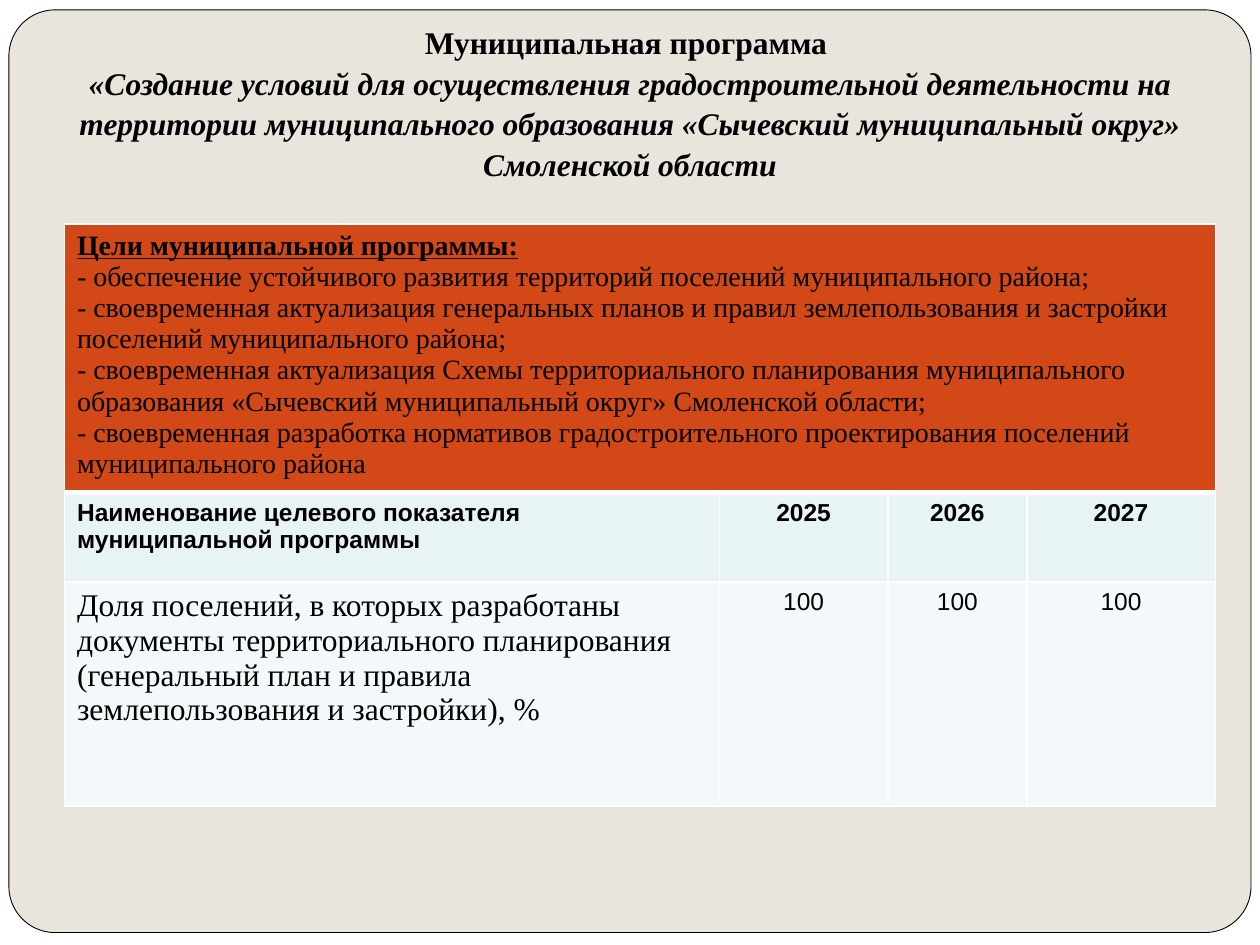
from lxml.etree import SubElement
from pptx import Presentation
from pptx.dml.color import RGBColor
from pptx.enum.shapes import MSO_SHAPE
from pptx.enum.text import MSO_ANCHOR, MSO_AUTO_SIZE, PP_ALIGN
from pptx.oxml.ns import qn
from pptx.util import Cm, Pt

BLACK = RGBColor(0x00, 0x00, 0x00)
WHITE = RGBColor(0xFF, 0xFF, 0xFF)
SAND = RGBColor(0xE9, 0xE5, 0xDC)
RUST = RGBColor(0xD3, 0x48, 0x17)
MINT = RGBColor(0xE7, 0xF3, 0xF4)
PALE = RGBColor(0xF3, 0xF9, 0xFA)
SERIF, SANS = "Times New Roman", "Arial"

HEAD = ("Муниципальная программа \v«Создание условий для осуществления "
        "градостроительной деятельности на территории муниципального образования "
        "«Сычевский муниципальный округ» Смоленской области")
GOALS = [
    "Цели муниципальной программы:",
    "- обеспечение устойчивого развития территорий поселений муниципального района;",
    "- своевременная актуализация генеральных планов и правил землепользования "
    "и застройки поселений муниципального района;",
    "- своевременная актуализация Схемы территориального планирования муниципального "
    "образования «Сычевский муниципальный округ» Смоленской области;",
    "- своевременная разработка нормативов градостроительного проектирования "
    "поселений муниципального района",
]
NAMES = ["Наименование целевого показателя муниципальной программы",
         "2025", "2026", "2027"]
SHARES = ["Доля поселений, в которых разработаны документы территориального "
          "планирования (генеральный план и правила землепользования и застройки), %",
          "100", "100", "100"]
COLS = [13.2, 3.4, 2.8, 3.8]
ROWS = [5.41, 1.8, 4.52]


class Page:
    """Hold the style and the current slide, and draw its elements."""

    def __init__(self, deck):
        self.slide = deck.slides.add_slide(deck.slide_layouts[5])
        self.ink = BLACK

    def style(self, para, size, face, bold=False, align=PP_ALIGN.LEFT):
        para.alignment = align
        for run in para.runs:
            font = run.font
            font.size, font.name, font.bold = Pt(size), face, bold
            font.color.rgb = self.ink

    def frame(self, left, top, width, height):
        box = self.slide.shapes.add_shape(
            MSO_SHAPE.ROUNDED_RECTANGLE, Cm(left), Cm(top), Cm(width), Cm(height))
        box.adjustments[0] = 0.05
        box.shadow.inherit = False
        box.fill.solid()
        box.fill.fore_color.rgb = SAND
        box.line.color.rgb = self.ink
        box.line.width = Pt(0.5)
        self.slide.shapes._spTree.insert(2, box._element)

    def title(self, text, left, top, width, height):
        box = self.slide.shapes.title
        box.left, box.top, box.width, box.height = map(Cm, (left, top, width, height))
        body = box.text_frame
        body.text = text
        body.auto_size = MSO_AUTO_SIZE.NONE
        body.vertical_anchor = MSO_ANCHOR.BOTTOM
        body.margin_bottom = Cm(0.25)
        para = body.paragraphs[0]
        para.line_spacing = 1.08
        self.style(para, 18, SERIF, True, PP_ALIGN.CENTER)
        para.runs[1].font.italic = True
        for gap in para._p.iter(qn("a:br")):
            SubElement(gap, qn("a:rPr"), sz="1800")

    def grid(self, left, top, cols, rows):
        shape = self.slide.shapes.add_table(
            len(rows), len(cols), Cm(left), Cm(top), Cm(sum(cols)), Cm(sum(rows)))
        table = shape.table
        table.first_row = table.horz_banding = False
        for col, width in zip(table.columns, cols):
            col.width = Cm(width)
        for row, height in zip(table.rows, rows):
            row.height = Cm(height)
        return table

    def cell(self, cell, fill, top=1, base=1):
        props = cell._tc.get_or_add_tcPr()
        for side, width in zip("LRTB", (1, 1, top, base)):
            line = SubElement(props, qn(f"a:ln{side}"), w=str(Pt(width)))
            paint = SubElement(line, qn("a:solidFill"))
            SubElement(paint, qn("a:srgbClr"), val=str(WHITE))
        cell.fill.solid()
        cell.fill.fore_color.rgb = fill

    def goals(self, table, texts):
        for cell in table.rows[0].cells:
            self.cell(cell, RUST, base=3)
        first = table.cell(0, 0)
        first.merge(table.cell(0, len(table.columns) - 1))
        first.text_frame.text = "\n".join(texts)
        for num, para in enumerate(first.text_frame.paragraphs):
            self.style(para, 16, SERIF, num == 0)
        first.text_frame.paragraphs[0].runs[0].font.underline = True

    def row(self, table, num, texts, fill, lead, bold=False, top=1):
        for col, text in enumerate(texts):
            cell = table.cell(num, col)
            self.cell(cell, fill, top)
            cell.text_frame.text = text
            size, face = (14, SANS) if col else lead
            align = PP_ALIGN.CENTER if col else PP_ALIGN.LEFT
            self.style(cell.text_frame.paragraphs[0], size, face, bold, align)


def main():
    deck = Presentation()
    deck.slide_width, deck.slide_height = Cm(25.4), Cm(19.05)
    page = Page(deck)
    page.frame(0.18, 0.2, 25.04, 18.6)
    page.title(HEAD, 1.27, 0.76, 22.86, 3.18)
    table = page.grid(1.3, 4.52, COLS, ROWS)
    page.goals(table, GOALS)
    page.row(table, 1, NAMES, MINT, (14, SANS), bold=True, top=3)
    page.row(table, 2, SHARES, PALE, (18, SERIF))
    deck.save("out.pptx")


if __name__ == "__main__":
    main()
